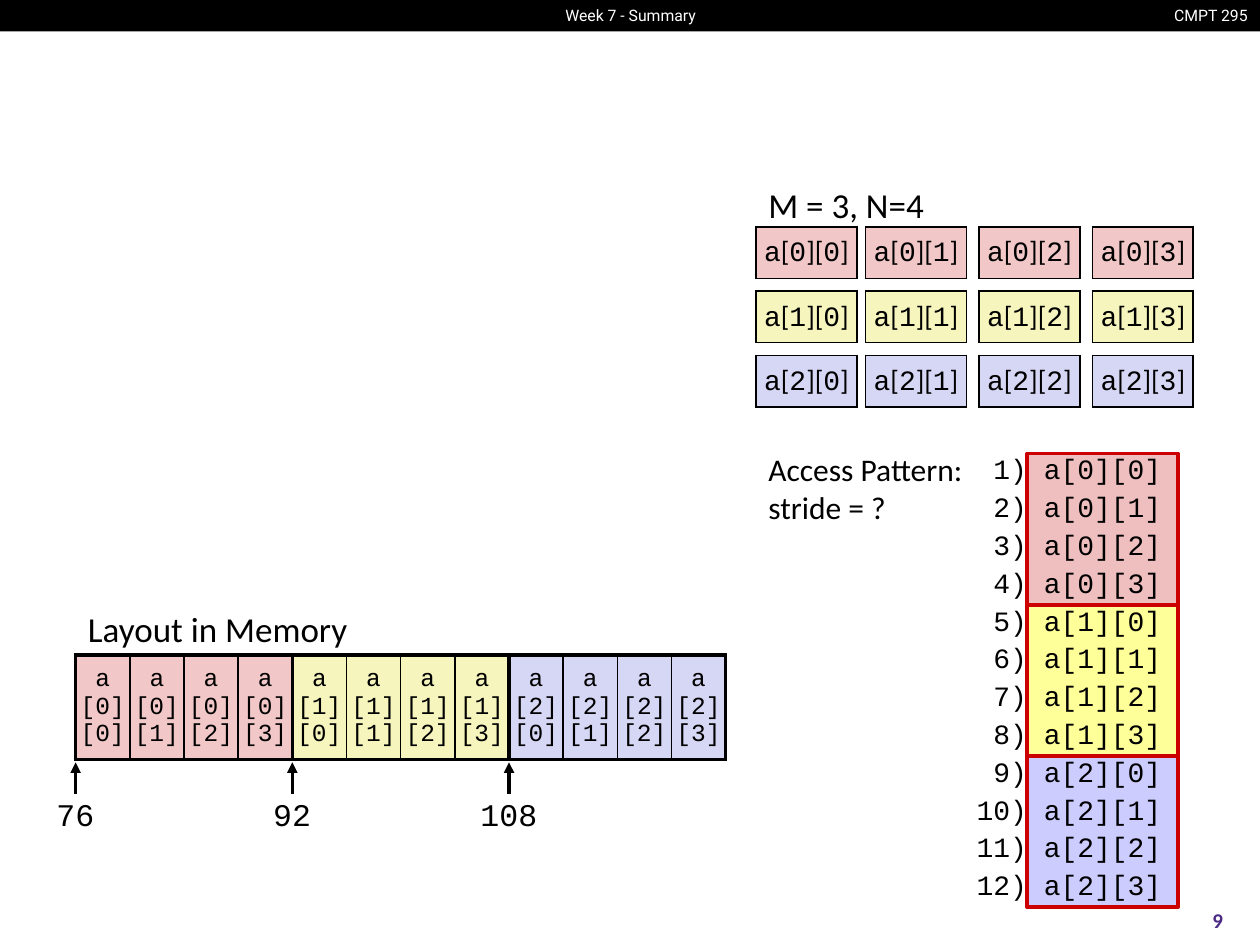
"""Build the slide on row-major array layout and its memory access pattern."""
from lxml.etree import SubElement
from pptx import Presentation
from pptx.dml.color import RGBColor as RGB
from pptx.enum.shapes import MSO_CONNECTOR as CONN, MSO_SHAPE as SHAPE
from pptx.enum.text import MSO_ANCHOR as ANCHOR, MSO_AUTO_SIZE as AUTO, PP_ALIGN as AL
from pptx.oxml.ns import qn
from pptx.util import Inches, Pt

THEME = {
    "sans": "Calibri", "mono": "Courier New", "bar_font": "Roboto",
    "ink": "000000", "paper": "FFFFFF", "number": "4B2A85", "frame": "CC0000",
    "cells": ["F1C7C7", "F6F5BD", "D6D6F5"],
    "blocks": ["EFBFBF", "FFFF99", "CCCCFF"],
    "bar": 9, "page": 12, "memory": 14, "code": 16, "body": 18, "heading": 20,
    "thin": 1, "thick": 2.25, "rule": 2,
}
NO_STYLE = "{2D5ABB26-0587-4C30-8999-92F81FD0307C}"
M, N = 3, 4

prs = Presentation()
prs.slide_width, prs.slide_height = Inches(10), Inches(7.5)
U = prs.slide_width // 100
s = prs.slides.add_slide(prs.slide_layouts[6])


def add_grid(x, y, cols, rows):
    """Add an unstyled table whose sizes are given in grid units."""
    frame = s.shapes.add_table(len(rows), len(cols), int(x * U), int(y * U),
                               int(sum(cols) * U), int(sum(rows) * U))
    table = frame.table
    table.first_row = table.horz_banding = False
    table._tbl.tblPr.find(qn("a:tableStyleId")).text = NO_STYLE
    for col, width in zip(table.columns, cols):
        col.width = int(width * U)
    for row, height in zip(table.rows, rows):
        row.height = int(height * U)
    return table


def write_cell(cell, parts, size, fill=None, edges=None, align=AL.CENTER):
    """Write text parts into a cell, with brackets in the sans font."""
    cell.margin_left = cell.margin_right = cell.margin_top = cell.margin_bottom = 0
    cell.vertical_anchor = ANCHOR.MIDDLE
    for side, width in (edges or {}).items():
        ln = SubElement(cell._tc.get_or_add_tcPr(), qn(f"a:ln{side}"), w=str(Pt(width)))
        SubElement(SubElement(ln, qn("a:solidFill")), qn("a:srgbClr"), val=THEME["ink"])
    if fill:
        cell.fill.solid()
        cell.fill.fore_color.rgb = RGB.from_string(fill)
    else:
        cell.fill.background()
    p = cell.text_frame.paragraphs[0]
    p.alignment = align
    for part in parts:
        r = p.add_run()
        r.text = part
        r.font.size = Pt(size)
        r.font.name = THEME["sans" if part[0] in "[]" else "mono"]
        r.font.color.rgb = RGB.from_string(THEME["ink"])
    if not parts:
        SubElement(p._p, qn("a:endParaRPr"), sz="100")


bar = s.shapes.add_shape(SHAPE.RECTANGLE, 0, 0, prs.slide_width, int(2.5 * U))
bar.shadow.inherit = False
bar.fill.solid()
bar.fill.fore_color.rgb = RGB.from_string(THEME["ink"])
bar.line.fill.background()

for i, color in enumerate(THEME["blocks"]):
    sp = s.shapes.add_shape(SHAPE.RECTANGLE, int(81.5 * U), (36 + 12 * i) * U, 12 * U, 12 * U)
    sp.shadow.inherit = False
    sp.fill.solid()
    sp.fill.fore_color.rgb = RGB.from_string(color)
    sp.line.color.rgb = RGB.from_string(THEME["frame"])
    sp.line.width = Pt(THEME["rule"])

labels = [
    ("CMPT 295", (91.9, 0, 8.1, 2.5), "bar", "bar_font", "paper", AL.RIGHT),
    ("Week 7 - Summary", (43, 0, 14.1, 2.5), "bar", "bar_font", "paper", AL.CENTER),
    ("9", (93.3, 71, 6.7, 4), "page", "sans", "number", AL.CENTER),
    ("Access Pattern:\nstride = ?", (60, 35.2, 17.9, 7.1), "body", "sans", "ink", AL.LEFT),
    ("M = 3, N=4", (60, 14.1, 14.6, 4.4), "heading", "sans", "ink", AL.LEFT),
    ("Layout in Memory", (6, 47.7, 23.3, 4.4), "heading", "sans", "ink", AL.LEFT),
]
for i, (address, width) in enumerate([("76", 5), ("92", 5), ("108", 6.5)]):
    x = 6 + 4.3 * N * i
    labels.append((address, (x - width / 2, 62.6, width, 4), "body", "mono", "ink", AL.LEFT))
    arrow = s.shapes.add_connector(CONN.STRAIGHT, int(x * U), 63 * U, int(x * U), int(60.5 * U))
    arrow.line.color.rgb = RGB.from_string(THEME["ink"])
    arrow.line.width = Pt(THEME["rule"])
    SubElement(arrow.line._get_or_add_ln(), qn("a:tailEnd"), type="triangle")
    SubElement(arrow._element.spPr, qn("a:effectLst"))

for text, box, size, font, color, align in labels:
    tf = s.shapes.add_textbox(*(int(v * U) for v in box)).text_frame
    tf.text = text
    tf.word_wrap = size == "page"
    tf.auto_size = AUTO.NONE if size == "page" else AUTO.SHAPE_TO_FIT_TEXT
    tf.vertical_anchor = ANCHOR.MIDDLE if size == "page" else ANCHOR.TOP
    for p in tf.paragraphs:
        p.alignment = align
        for r in p.runs:
            r.font.size = Pt(THEME[size])
            r.font.name = THEME[font]
            r.font.bold = size == "page"
            r.font.color.rgb = RGB.from_string(THEME[color])

thin, thick = THEME["thin"], THEME["thick"]
matrix = add_grid(60, 18, [8, 0.7, 8, 1, 8, 1, 8], [4.1, 1, 4.1, 1, 4.1])
for row in range(2 * M - 1):
    for col in range(2 * N - 1):
        sides = ("" if row % 2 else "LR") + ("" if col % 2 else "TB")
        edges = {side: thin for side in sides}
        is_item = len(sides) == 4
        parts = ["a", "[", str(row // 2), "][", str(col // 2), "]"] if is_item else []
        fill = THEME["cells"][row // 2] if is_item else None
        write_cell(matrix.cell(row, col), parts, THEME["code"], fill, edges)

memory = add_grid(6, 52, [4.3] * (M * N), [8.3])
access = add_grid(76.5, 36, [5, 12], [3] * (M * N))
for k in range(M * N):
    i, j = divmod(k, N)
    edges = {"L": thin if j else thick, "R": thick if j == N - 1 else thin,
             "T": thick, "B": thick}
    write_cell(memory.cell(0, k), [f"a [{i}] [{j}]"], THEME["memory"], THEME["cells"][i], edges)
    write_cell(access.cell(k, 0), [f"{k + 1})"], THEME["code"], align=AL.RIGHT)
    write_cell(access.cell(k, 1), [f"a[{i}][{j}]"], THEME["code"])

prs.save("out.pptx")
